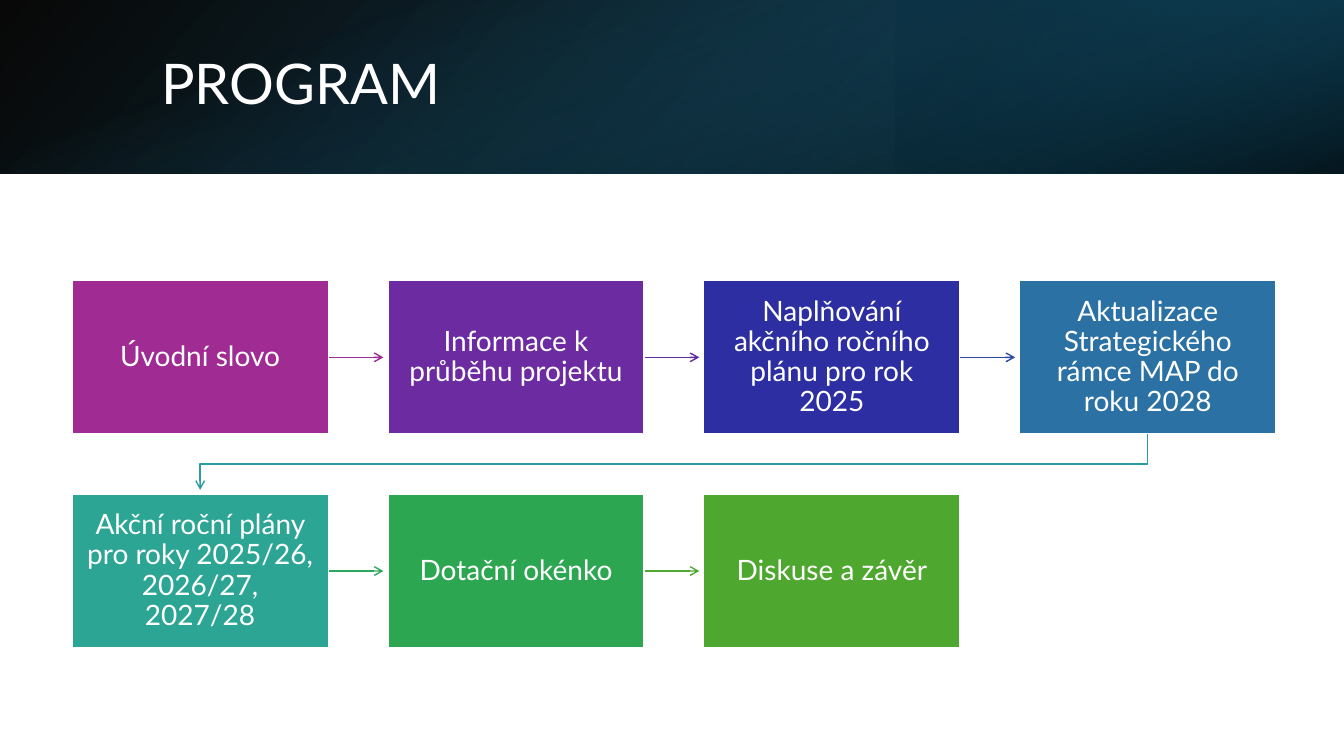
from pptx import Presentation
from pptx.dml.color import RGBColor
from pptx.enum.shapes import MSO_CONNECTOR, MSO_SHAPE
from pptx.enum.text import MSO_ANCHOR, MSO_AUTO_SIZE, PP_ALIGN
from pptx.oxml import parse_xml
from pptx.oxml.ns import nsdecls
from pptx.util import Inches, Pt

RECT = MSO_SHAPE.RECTANGLE
STRAIGHT = MSO_CONNECTOR.STRAIGHT
MIDDLE = MSO_ANCHOR.MIDDLE
LEFT, CENTER = PP_ALIGN.LEFT, PP_ALIGN.CENTER

FONT = "Lato"
WIDE, HIGH = 13.33, 7.5
BAND = 1.72
COLS = 4
BOX_W, BOX_H = 2.55, 1.53
STEP_X, STEP_Y = 3.133, 2.12
GAP = 0.04

COLORS = {
    "white": "FFFFFF",
    "black": "000000",
    "navy": "104862",
    "deep": "0B3041",
    "teal": "156082",
}

# Text, box colour, colour of the arrow to the next step
STEPS = [
    ("Úvodní slovo", "A02B93", "A02B93"),
    ("Informace k průběhu projektu", "6C2BA1", "5F2CA1"),
    ("Naplňování akčního ročního plánu pro rok 2025", "2C2EA2", "2C49A3"),
    ("Aktualizace Strategického rámce MAP do roku 2028", "2C71A4", "2D9AA4"),
    ("Akční roční plány pro roky 2025/26, 2026/27, 2027/28", "2DA594", "2DA65F"),
    ("Dotační okénko", "2DA651", "4EA72E"),
    ("Diskuse a závěr", "4EA72E", None),
]


def rgb(code):
    return RGBColor.from_string(code)


def write(frame, text, size, align):
    frame.word_wrap = True
    frame.auto_size = MSO_AUTO_SIZE.NONE
    frame.vertical_anchor = MIDDLE
    para = frame.paragraphs[0]
    para.alignment = align
    para.line_spacing = 0.9
    run = para.add_run()
    run.text = text
    run.font.name = FONT
    run.font.size = Pt(size)
    run.font.color.rgb = rgb(COLORS["white"])


def add_fade(slide, box, stops, angle, turn=0, flip=False):
    """Add a borderless rectangle with a gradient of (place, colour, opacity) stops."""
    shape = slide.shapes.add_shape(RECT, *map(Inches, box))
    shape.shadow.inherit = False
    shape.line.fill.background()
    shape.rotation = turn
    props = shape._element.spPr
    if flip:
        props.xfrm.set("flipH", "1")
    marks = "".join(
        f'<a:gs pos="{place * 1000}"><a:srgbClr val="{COLORS[name]}">'
        f'<a:alpha val="{alpha * 1000}"/></a:srgbClr></a:gs>'
        for place, name, alpha in stops
    )
    props.prstGeom.addnext(parse_xml(
        f'<a:gradFill {nsdecls("a")} rotWithShape="1"><a:gsLst>{marks}</a:gsLst>'
        f'<a:lin ang="{angle * 60000}" scaled="0"/></a:gradFill>'
    ))


def add_header(slide, left, top, width, height):
    add_fade(slide, (left, top, width, height),
             [(0, "black", 96), (100, "navy", 100 - 4)], 140, flip=True)
    third = width / 3
    add_fade(slide, (left + 2 * third, top, third, height),
             [(19, "deep", 68), (100, "teal", 79)], 320, turn=180, flip=True)
    shift = (width - height) / 2
    add_fade(slide, (left + shift, top - shift, height, width),
             [(23, "teal", 0), (99, "black", 74)], 340, turn=90)

    title = slide.shapes.title
    title.left, title.top = Inches(left + 1.5), Inches(top + 0.38)
    title.width, title.height = Inches(10.98), Inches(0.96)
    write(title.text_frame, "PROGRAM", 40, LEFT)
    slide.shapes._spTree.append(title._element)


def add_box(slide, left, top, text, color):
    box = slide.shapes.add_shape(
        RECT, Inches(left), Inches(top), Inches(BOX_W), Inches(BOX_H))
    box.shadow.inherit = False
    box.fill.solid()
    box.fill.fore_color.rgb = rgb(color)
    box.line.color.rgb = rgb(COLORS["white"])
    box.line.width = Pt(1.5)
    frame = box.text_frame
    frame.margin_left = frame.margin_right = Inches(0.12)
    frame.margin_top = frame.margin_bottom = Inches(0.13)
    write(frame, text, 20, CENTER)
    return box


def style_arrow(shape, color):
    shape.line.color.rgb = rgb(color)
    shape.line.width = Pt(1)
    shape.line._get_or_add_ln().append(
        parse_xml(f'<a:tailEnd {nsdecls("a")} type="arrow"/>'))


def link_next(slide, box, target, color):
    mid = box.top + box.height // 2
    end = target.left - Inches(GAP)
    arrow = slide.shapes.add_connector(
        STRAIGHT, box.left + box.width, mid, end, mid)
    arrow.begin_connect(box, 3)
    style_arrow(arrow, color)
    arrow._element.spPr.append(parse_xml(f'<a:effectLst {nsdecls("a")}/>'))


def link_row(slide, box, target, color):
    """Lead from the end of one row to the start of the next."""
    start, end = (b.left + b.width // 2 for b in (box, target))
    base = box.top + box.height
    turn = (base + target.top) // 2
    path = slide.shapes.build_freeform(start, base)
    path.add_line_segments(
        [(start, turn), (end, turn), (end, target.top - Inches(GAP))], close=False)
    arrow = path.convert_to_shape()
    arrow.shadow.inherit = False
    arrow.fill.background()
    style_arrow(arrow, color)


def add_flow(slide, left, top):
    boxes = [
        add_box(slide, left + i % COLS * STEP_X, top + i // COLS * STEP_Y, text, fill)
        for i, (text, fill, _) in enumerate(STEPS)
    ]
    for box, target, (_, _, color) in zip(boxes, boxes[1:], STEPS):
        link = link_next if box.top == target.top else link_row
        link(slide, box, target, color)


def main():
    deck = Presentation()
    deck.slide_width, deck.slide_height = Inches(WIDE), Inches(HIGH)
    slide = deck.slides.add_slide(deck.slide_layouts[5])
    add_header(slide, 0, 0, WIDE, BAND)
    add_flow(slide, 0.71, 2.78)
    deck.save("out.pptx")


if __name__ == "__main__":
    main()
